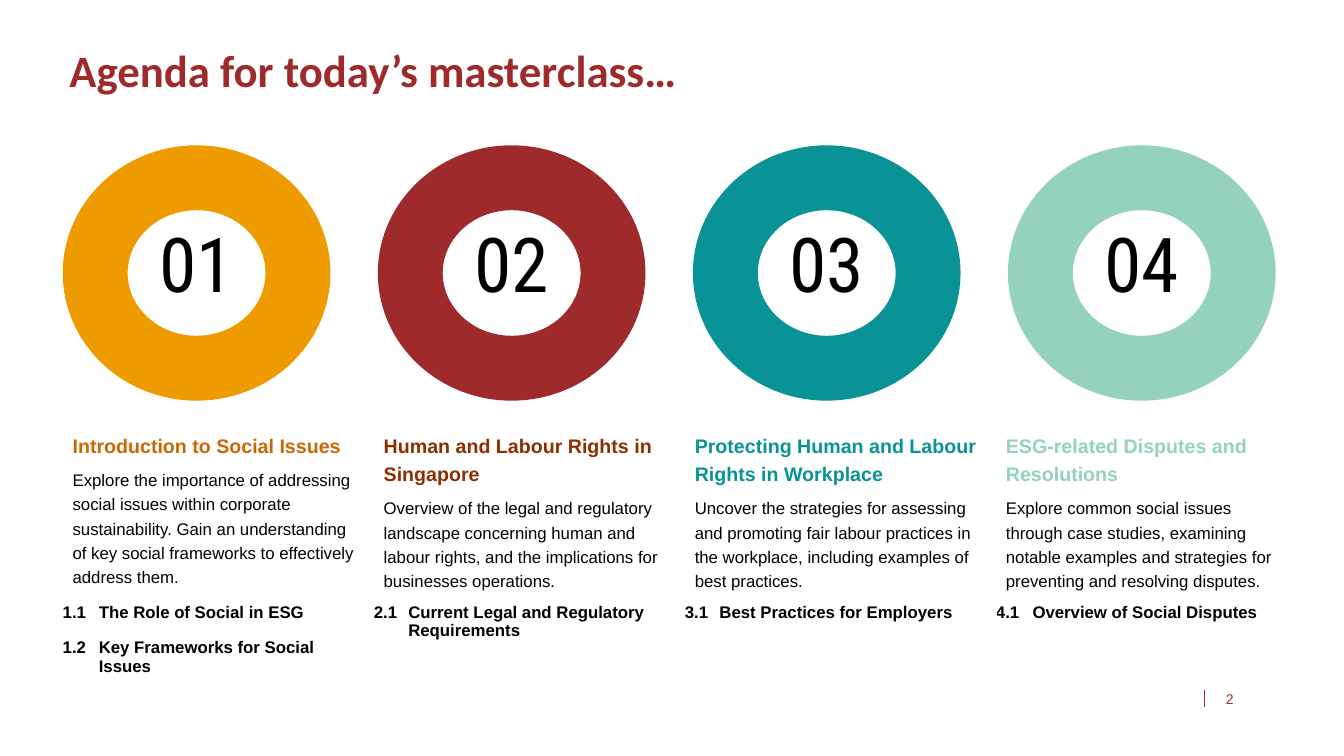
import pptx
import pptx.util
import pptx.dml.color
import pptx.enum.shapes
import pptx.enum.text
import lxml.etree

Cm = pptx.util.Cm
RGBColor = pptx.dml.color.RGBColor
SHAPE = pptx.enum.shapes.MSO_SHAPE
ALIGN = pptx.enum.text.PP_ALIGN
ANCHOR = pptx.enum.text.MSO_ANCHOR

AMBER = RGBColor(0xEE, 0x9B, 0x00)
ORANGE = RGBColor(0xCA, 0x67, 0x02)
RED = RGBColor(0x9E, 0x2A, 0x2B)
BROWN = RGBColor(0x8C, 0x2E, 0x02)
TEAL = RGBColor(0x0A, 0x93, 0x96)
MINT = RGBColor(0x94, 0xD2, 0xBD)
BLACK = RGBColor(0, 0, 0)

TOPICS = [
    dict(ring=AMBER, ink=ORANGE, head="Introduction to Social Issues",
         body="Explore the importance of addressing social issues within corporate "
              "sustainability. Gain an understanding of key social frameworks to "
              "effectively address them.",
         items=["The Role of Social in ESG", "Key Frameworks for Social Issues"],
         tab=0.91, row=0.89),
    dict(ring=RED, ink=BROWN, head="Human and Labour Rights in Singapore",
         body="Overview of the legal and regulatory landscape concerning human and "
              "labour rights, and the implications for businesses operations.",
         items=["Current Legal and Regulatory Requirements"], tab=0.87, row=0.89),
    dict(ring=TEAL, ink=TEAL, head="Protecting Human and Labour Rights in Workplace",
         body="Uncover the strategies for assessing and promoting fair labour practices "
              "in the workplace, including examples of best practices.",
         items=["Best Practices for Employers", "", ""], tab=0.87, row=0.42),
    dict(ring=MINT, ink=MINT, head="ESG-related Disputes and Resolutions",
         body="Explore common social issues through case studies, examining notable "
              "examples and strategies for preventing and resolving disputes.",
         items=["Overview of Social Disputes"], tab=0.92, row=0.89),
]


def write(frame, text, more=False, size=12, font="Arial", color=BLACK, bold=False,
          align=ALIGN.LEFT, space=None, after=None, anchor=ANCHOR.TOP):
    """Write one formatted paragraph into a text frame."""
    frame.word_wrap = True
    frame.vertical_anchor = anchor
    frame.margin_left = frame.margin_right = frame.margin_top = frame.margin_bottom = 0
    para = frame.add_paragraph() if more else frame.paragraphs[0]
    para.alignment = align
    para.space_before = pptx.util.Pt(0)
    if space:
        para.line_spacing = space
    if after:
        para.space_after = pptx.util.Pt(after)
    run = para.add_run()
    run.text = text
    run.font.size = pptx.util.Pt(size)
    run.font.name = font
    run.font.bold = bold
    run.font.color.rgb = color


def add_title(slide, left, top, width, height):
    """Place and format the title."""
    title = slide.shapes.title
    title.left, title.top, title.width, title.height = map(Cm, (left, top, width, height))
    write(title.text_frame, "Agenda for today’s masterclass…", size=32, font="Calibri",
          color=RED, bold=True, space=0.7, anchor=ANCHOR.MIDDLE)


def add_ring(slide, label, color, left, top, width, height):
    """Draw a numbered ring as a group."""
    group = slide.shapes.add_group_shape()
    wide, high = 2.64, 1.63
    box = group.shapes.add_textbox(Cm(left + (width - wide) / 2), Cm(top + (height - high) / 2),
                                   Cm(wide), Cm(high))
    write(box.text_frame, label, size=54, font="Roboto Condensed", align=ALIGN.CENTER,
          space=0.7, anchor=ANCHOR.MIDDLE)
    ring = group.shapes.add_shape(SHAPE.DONUT, Cm(left), Cm(top), Cm(width), Cm(height))
    ring.shadow.inherit = False
    ring.fill.solid()
    ring.fill.fore_color.rgb = color
    ring.line.color.rgb = color
    ring.line.width = pptx.util.Pt(1)


def add_blurb(slide, topic, left, top, width, height):
    """Write the heading and summary of a topic."""
    frame = slide.shapes.add_textbox(Cm(left), Cm(top), Cm(width), Cm(height)).text_frame
    write(frame, topic["head"], size=14, color=topic["ink"], bold=True, space=1.2, after=6)
    write(frame, topic["body"], more=True, space=1.2, after=6)


def add_items(slide, number, topic, left, top, width):
    """List the numbered parts of a topic in a plain table."""
    items, tab, row = topic["items"], topic["tab"], topic["row"]
    table = slide.shapes.add_table(len(items), 2, Cm(left), Cm(top), Cm(width),
                                   Cm(row * len(items))).table
    table.first_row = table.horz_banding = False
    table.columns[0].width = Cm(tab)
    table.columns[1].width = Cm(width - tab)
    for i, item in enumerate(items):
        table.rows[i].height = Cm(row)
        label = f"{number}.{i + 1}" if item else ""
        for cell, text in zip(table.rows[i].cells, (label, item)):
            cell.fill.background()
            cell.margin_left = cell.margin_right = cell.margin_top = cell.margin_bottom = 0
            write(cell.text_frame, text, bold=True)


def add_footer(slide, left, top, width, height):
    """Draw the page number and the rule beside it."""
    box = slide.shapes.add_textbox(Cm(left), Cm(top), Cm(width), Cm(height))
    write(box.text_frame, "2", size=10, color=RED, align=ALIGN.RIGHT, anchor=ANCHOR.BOTTOM)
    rule = slide.shapes.add_connector(pptx.enum.shapes.MSO_CONNECTOR.STRAIGHT,
                                      Cm(left - 0.05), Cm(top), Cm(left - 0.05), Cm(top + height))
    rule.line.color.rgb = RED
    rule.line.width = pptx.util.Pt(0.5)
    props = rule._element.spPr
    lxml.etree.SubElement(props, pptx.oxml.ns.qn("a:effectLst"))


def main():
    """Build the agenda slide."""
    deck = pptx.Presentation()
    deck.slide_width, deck.slide_height = Cm(33.87), Cm(19.05)
    slide = deck.slides.add_slide(deck.slide_layouts.get_by_name("Title Only"))
    add_title(slide, 1.75, 1.19, 23.44, 1.47)
    for i, topic in enumerate(TOPICS):
        left = 1.83 + 7.84 * i
        add_ring(slide, f"{i + 1:02}", topic["ring"], 1.6 + 7.94 * i, 3.68, 6.71, 6.4)
        add_blurb(slide, topic, left, 10.82, 7.11, 4.06)
        add_items(slide, i + 1, topic, left - 0.25, 15.19, 7.34)
    add_footer(slide, 30.4, 17.4, 0.69, 0.42)
    deck.save("out.pptx")


if __name__ == "__main__":
    main()
